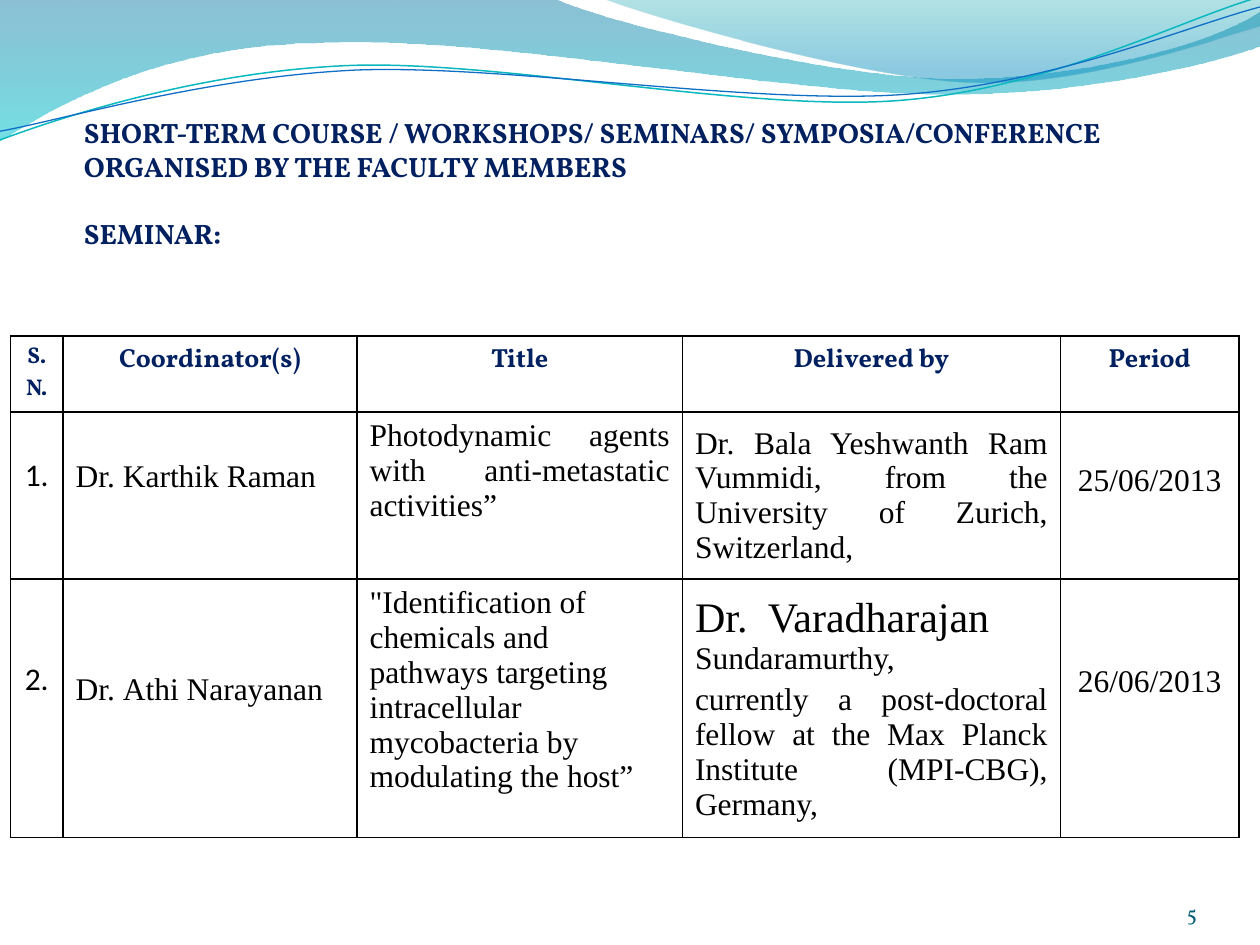
from lxml.etree import SubElement
from pptx import Presentation
from pptx.dml.color import RGBColor
from pptx.enum.text import MSO_ANCHOR, MSO_AUTO_SIZE, PP_ALIGN
from pptx.oxml.ns import qn
from pptx.util import Pt

COLORS = {"navy": "002060", "black": "000000", "number": "045D75",
          "teal": "0AB8BF", "blue": "0F6FC6"}
HEADING_FONT, BODY_FONT, ORDER_FONT = "Vollkorn", "Times New Roman", "Calibri"

# Curves: a start point, then segments of one point (line) or three (Bezier)
WAVES = [
    # (segments, gradient stops as position, colour, opacity)
    ([(0, -0.7), [(317, -0.7)],
      [(343, 12), (478, 45), (546, 45)], [(614, 45), (690, 27), (720, 6.5)],
      [(720.7, 26)],
      [(708, 32), (626, 55), (537, 54)], [(448, 54), (275, 20), (185, 24.5)],
      [(93, 25), (33, 60), (-0.7, 81)]],
     [(0, "0074A1", 45), (1, "00C6CF", 55)]),
    ([(345, -0.7),
      [(366, 8), (491, 45), (554, 47)], [(616, 50), (692, 23), (720, 15)],
      [(720, 0)]],
     [(0, "00A1A9", 30), (0.8, "008BBF", 45)]),
]
STRAND_ROTATION = 357.3
STRANDS = [
    ([(-1.4, 63), [(34, 51.7), (114.3, 29.4), (199.4, 29.9)],
      [(284.4, 30.5), (425.9, 67.2), (512.1, 64.7)],
      [(599.3, 62.3), (676.1, 25.9), (720.6, 15.5)]], COLORS["teal"], 0.85),
    ([(-1.1, 58), [(33.1, 53.6), (118.2, 32.6), (204.3, 32.7)],
      [(290.3, 33.7), (429.1, 63.3), (515.3, 61.4)],
      [(601.5, 59.4), (678.9, 30), (721.4, 21)]], COLORS["blue"], 0.75),
]

COLUMN_WIDTHS = [30, 168, 186, 216, 102]
ROW_HEIGHTS = [43.5, 95.5, 147.5]
HEADERS = ["S.N.", "Coordinator(s)", "Title", "Delivered by", "Period"]
LEFT, CENTER, JUSTIFY = PP_ALIGN.LEFT, PP_ALIGN.CENTER, PP_ALIGN.JUSTIFY
# Each cell: paragraphs, alignment, options
SEMINARS = [
    [(["1."], CENTER, {"font": ORDER_FONT, "top": 25.5}),
     (["Dr.\u00a0Karthik Raman"], LEFT, {"middle": True, "bottom": 25}),
     (["Photodynamic agents with anti-metastatic activities”"], JUSTIFY, {}),
     (["Dr. Bala Yeshwanth Ram Vummidi, from the University of Zurich, Switzerland,"],
      JUSTIFY, {"middle": True}),
     (["25/06/2013"], CENTER, {"top": 29.5})],
    [(["2."], CENTER, {"font": ORDER_FONT, "top": 46.5}),
     (["Dr.\u00a0Athi Narayanan"], LEFT, {"middle": True, "bottom": 25}),
     (['"Identification of chemicals and pathways targeting intracellular '
       'mycobacteria by modulating the host”'], LEFT, {}),
     (["Dr.  Varadharajan",
       "currently a post-doctoral fellow at the Max Planck Institute (MPI-CBG), Germany,"],
      JUSTIFY, {"middle": True}),
     (["26/06/2013"], CENTER, {"top": 48.5})],
]


def format_run(run, font, size, color, bold=False):
    run.font.name, run.font.size, run.font.bold = font, Pt(size), bold
    run.font.color.rgb = RGBColor.from_string(color)


def add_curve(slide, segments, close):
    points = [segments[0]] + [point for segment in segments[1:] for point in segment]
    points = [(Pt(x), Pt(y)) for x, y in points]
    builder = slide.shapes.build_freeform(*points[0])
    builder.add_line_segments(points[1:], close=close)
    shape = builder.convert_to_shape()
    shape.shadow.inherit = False
    # Join each three-point segment into one Bezier curve
    lines = iter(list(shape.element.iter(qn("a:lnTo"))))
    for segment in segments[1:]:
        first, *others = [next(lines) for _ in segment]
        if others:
            first.tag = qn("a:cubicBezTo")
            for line in others:
                first.append(line[0])
                line.getparent().remove(line)
    return shape


def add_wave_band(slide):
    for segments, stops in WAVES:
        shape = add_curve(slide, segments, True)
        shape.line.fill.background()
        shape.fill.gradient()
        shape.fill.gradient_angle = 270
        for stop, (position, color, opacity) in zip(shape.fill.gradient_stops, stops):
            stop.position = position
            stop.color.rgb = RGBColor.from_string(color)
        color_elements = shape.element.spPr.findall(".//" + qn("a:srgbClr"))
        for element, (position, color, opacity) in zip(color_elements, stops):
            SubElement(element, qn("a:alpha")).set("val", str(opacity * 1000))
    for segments, color, width in STRANDS:
        shape = add_curve(slide, segments, False)
        shape.rotation = STRAND_ROTATION
        shape.fill.background()
        shape.line.color.rgb = RGBColor.from_string(color)
        shape.line.width = Pt(width)


def add_title(slide, left, top, width, height):
    title = slide.shapes.title
    title.left, title.top, title.width, title.height = map(Pt, (left, top, width, height))
    frame = title.text_frame
    frame.auto_size, frame.vertical_anchor = MSO_AUTO_SIZE.NONE, MSO_ANCHOR.BOTTOM
    frame.margin_left = frame.margin_right = 0
    frame.margin_top, frame.margin_bottom = Pt(3.6), Pt(19.2)
    frame.text = ("SHORT-TERM COURSE / WORKSHOPS/ SEMINARS/ SYMPOSIA/CONFERENCE "
                  "ORGANISED BY THE FACULTY MEMBERS\nSEMINAR:")
    for paragraph in frame.paragraphs:
        paragraph.alignment, paragraph.line_spacing = LEFT, Pt(19.2)
        format_run(paragraph.runs[0], HEADING_FONT, 16, COLORS["navy"], True)
    frame.paragraphs[1].space_before = Pt(19.2)


def add_borders(cell):
    properties = cell._tc.get_or_add_tcPr()
    for index, side in enumerate(("a:lnL", "a:lnR", "a:lnT", "a:lnB")):
        line = properties.makeelement(qn(side), {"w": str(Pt(1))})
        fill = SubElement(line, qn("a:solidFill"))
        SubElement(fill, qn("a:srgbClr")).set("val", COLORS["black"])
        properties.insert(index, line)


def fill_cell(cell, paragraphs, alignment, font=BODY_FONT, size=18, color=COLORS["black"],
              bold=False, top=3.6, bottom=3.6, middle=False):
    cell.fill.background()
    add_borders(cell)
    cell.margin_top, cell.margin_bottom = Pt(top), Pt(bottom)
    cell.vertical_anchor = MSO_ANCHOR.MIDDLE if middle else MSO_ANCHOR.TOP
    cell.text_frame.text = "\n".join(paragraphs)
    for index, paragraph in enumerate(cell.text_frame.paragraphs):
        paragraph.alignment = alignment
        paragraph.space_before = Pt(3.6 if index else 0)
        format_run(paragraph.runs[0], font, size, color, bold)


def add_seminar_table(slide, left, top):
    table = slide.shapes.add_table(
        len(ROW_HEIGHTS), len(COLUMN_WIDTHS), Pt(left), Pt(top),
        Pt(sum(COLUMN_WIDTHS)), Pt(sum(ROW_HEIGHTS))).table
    table.first_row = table.horz_banding = False
    for column, width in zip(table.columns, COLUMN_WIDTHS):
        column.width = Pt(width)
    for row, height in zip(table.rows, ROW_HEIGHTS):
        row.height = Pt(height)
    for index, header in enumerate(HEADERS):
        fill_cell(table.cell(0, index), [header], CENTER, HEADING_FONT,
                  15 if index else 13, COLORS["navy"], True)
    for row_index, seminar in enumerate(SEMINARS, 1):
        for column_index, (paragraphs, alignment, options) in enumerate(seminar):
            fill_cell(table.cell(row_index, column_index), paragraphs, alignment, **options)
    # The speaker's first name is larger than the surname
    speaker = table.cell(2, 3).text_frame.paragraphs[0]
    speaker.alignment = LEFT
    speaker.runs[0].font.size = Pt(24)
    surname = speaker.add_run()
    surname.text = " Sundaramurthy,"
    format_run(surname, BODY_FONT, 18, COLORS["black"])


def add_slide_number(slide, left, top, width, height):
    frame = slide.shapes.add_textbox(*map(Pt, (left, top, width, height))).text_frame
    frame.word_wrap, frame.vertical_anchor = True, MSO_ANCHOR.BOTTOM
    frame.margin_left = frame.margin_right = frame.margin_top = frame.margin_bottom = 0
    frame.text = "5"
    frame.paragraphs[0].alignment = PP_ALIGN.RIGHT
    format_run(frame.paragraphs[0].runs[0], HEADING_FONT, 12, COLORS["number"])


def main():
    presentation = Presentation()
    presentation.slide_width, presentation.slide_height = Pt(720), Pt(540)
    slide = presentation.slides.add_slide(presentation.slide_layouts[5])
    add_wave_band(slide)
    add_title(slide, 48, 102, 612, 60)
    add_seminar_table(slide, 6, 192)
    add_slide_number(slide, 624, 500.4, 60, 28.8)
    presentation.save("out.pptx")


if __name__ == "__main__":
    main()
